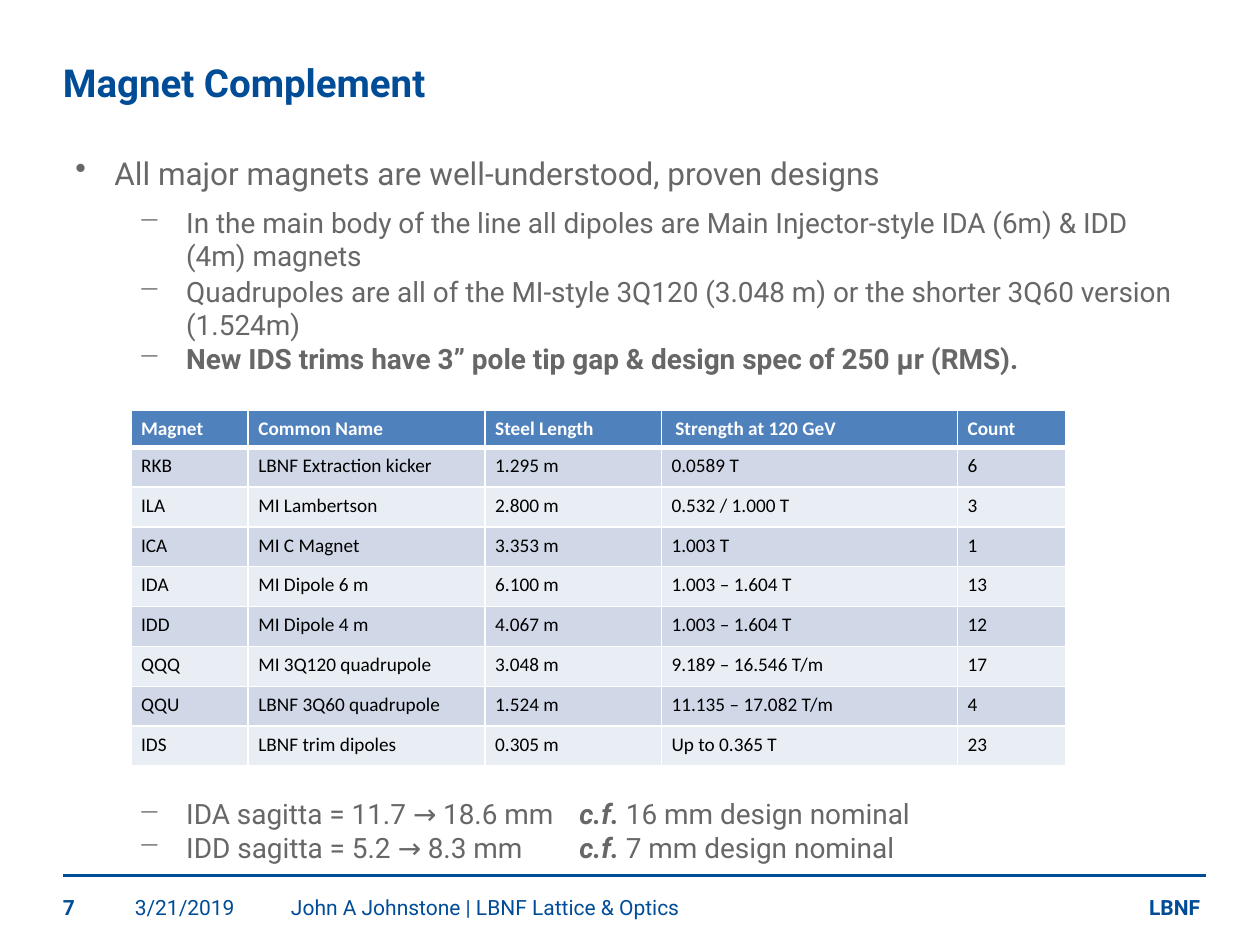
from dataclasses import dataclass

from lxml import etree
from pptx import Presentation
from pptx.dml.color import RGBColor
from pptx.enum.shapes import MSO_CONNECTOR
from pptx.enum.text import MSO_ANCHOR
from pptx.oxml.ns import qn
from pptx.util import Inches, Pt

STRAIGHT = MSO_CONNECTOR.STRAIGHT
TOP, BOTTOM = MSO_ANCHOR.TOP, MSO_ANCHOR.BOTTOM
BLUE, GRAY, WHITE, BLACK = "004C97", "676767", "FFFFFF", "000000"
HEADER_FILL, BAND_FILLS = "4F81BD", ("D0D8E8", "E9EDF4")


@dataclass
class Label:
    text: str
    left: float
    top: float
    width: float
    height: float
    size: int = 12
    bold: bool = False
    anchor: MSO_ANCHOR = BOTTOM


@dataclass
class Bullet:
    """One list item; each run is (text, bold, italic)."""
    runs: list
    before: float = 0
    size: int = 16
    char: str = "−"
    margin: float = 0.88
    hanging: float = 0.38
    level: int = 1


LABELS = [
    Label("Magnet Complement", 0.5, 0.47, 9.07, 0.62, 22, True, TOP),
    Label("7", 0.5, 7.1, 0.57, 0.2, bold=True),
    Label("3/21/2019", 1.07, 7.1, 1.24, 0.2),
    Label("John A Johnstone | LBNF Lattice & Optics", 2.31, 7.1, 6.14, 0.2),
    Label("LBNF", 9.12, 7.09, 0.46, 0.21, bold=True),
]

BULLETS = [
    Bullet([("All major magnets are well-understood, proven designs", False, False)],
           size=18, char="•", margin=0.31, hanging=0.31, level=0),
    Bullet([("In the main body of the line all dipoles are Main Injector-style "
             "IDA (6m) & IDD (4m) magnets", False, False)], before=8),
    Bullet([("Quadrupoles are all of the MI-style 3Q120 (3.048 m) or the shorter "
             "3Q60 version (1.524m)", False, False)], before=1),
    Bullet([("New IDS trims have 3” pole tip gap & design spec of 250 μr (RMS).",
             True, False)]),
    Bullet([("IDA sagitta = 11.7 → 18.6 mm\t", False, False), ("c.f.", True, True),
            (" 16 mm design nominal", False, False)], before=241),
    Bullet([("IDD sagitta = 5.2 → 8.3 mm\t", False, False), ("c.f.", True, True),
            (" 7 mm design nominal", False, False)]),
]

COLUMN_WIDTHS = [0.93, 1.88, 1.4, 2.35, 0.86]
STRENGTH_COLUMN = 3
TABLE_HEIGHT, HEADER_HEIGHT = 2.82, 0.29
ROWS = [
    ("Magnet", "Common Name", "Steel Length", "Strength at 120 GeV", "Count"),
    ("RKB", "LBNF Extraction kicker", "1.295 m", "0.0589 T", "6"),
    ("ILA", "MI Lambertson", "2.800 m", "0.532 / 1.000 T", "3"),
    ("ICA", "MI C Magnet", "3.353 m", "1.003 T", "1"),
    ("IDA", "MI Dipole 6 m", "6.100 m", "1.003 – 1.604 T", "13"),
    ("IDD", "MI Dipole 4 m", "4.067 m", "1.003 – 1.604 T", "12"),
    ("QQQ", "MI 3Q120 quadrupole", "3.048 m", "9.189 – 16.546 T/m", "17"),
    ("QQU", "LBNF 3Q60 quadrupole", "1.524 m", "11.135 – 17.082 T/m", "4"),
    ("IDS", "LBNF trim dipoles", "0.305 m", "Up to 0.365 T", "23"),
]


def rgb(value: str) -> RGBColor:
    return RGBColor.from_string(value)


def add_text(p, text: str, *, size: float, color: str, font: str = "Roboto",
             bold: bool = False, italic: bool = False) -> None:
    r = p.add_run()
    r.text = text
    r.font.name, r.font.size = font, Pt(size)
    r.font.bold, r.font.italic = bold, italic
    r.font.color.rgb = rgb(color)


def add_label(slide, label: Label) -> None:
    sp = slide.shapes.add_textbox(Inches(label.left), Inches(label.top),
                                  Inches(label.width), Inches(label.height))
    tf = sp.text_frame
    tf.word_wrap = True
    tf.vertical_anchor = label.anchor
    tf.margin_left = tf.margin_right = tf.margin_top = tf.margin_bottom = 0
    add_text(tf.paragraphs[0], label.text, size=label.size, color=BLUE, bold=label.bold)


def add_bullets(slide, bullets: list[Bullet]) -> None:
    sp = slide.shapes.add_textbox(Inches(0.5), Inches(1.17), Inches(8.96), Inches(5.77))
    tf = sp.text_frame
    tf.word_wrap = True
    for i, bullet in enumerate(bullets):
        p = tf.add_paragraph() if i else tf.paragraphs[0]
        p.level = bullet.level
        pPr = p._p.get_or_add_pPr()
        pPr.set("marL", str(Inches(bullet.margin)))
        pPr.set("indent", str(-Inches(bullet.hanging)))
        etree.SubElement(pPr, qn("a:buChar"), char=bullet.char)
        if bullet.before:
            p.space_before = Pt(bullet.before)
        for text, bold, italic in bullet.runs:
            add_text(p, text, size=bullet.size, color=GRAY, bold=bold, italic=italic)


def set_borders(cell, widths: dict[str, float]) -> None:
    """Draw white cell borders; widths maps L, R, T, B, in that order, to points."""
    tcPr = cell._tc.get_or_add_tcPr()
    for i, (side, width) in enumerate(widths.items()):
        ln = etree.Element(qn(f"a:ln{side}"), w=str(Pt(width)))
        fill = etree.SubElement(ln, qn("a:solidFill"))
        etree.SubElement(fill, qn("a:srgbClr"), val=WHITE)
        tcPr.insert(i, ln)


def add_magnet_table(slide) -> None:
    table = slide.shapes.add_table(len(ROWS), len(COLUMN_WIDTHS), Inches(1.04), Inches(3.26),
                                   Inches(sum(COLUMN_WIDTHS)), Inches(TABLE_HEIGHT)).table
    for column, width in zip(table.columns, COLUMN_WIDTHS):
        column.width = Inches(width)
    body_height = (TABLE_HEIGHT - HEADER_HEIGHT) / (len(ROWS) - 1)
    for i, values in enumerate(ROWS):
        header = i == 0
        table.rows[i].height = Inches(HEADER_HEIGHT if header else body_height)
        for j, value in enumerate(values):
            cell = table.cell(i, j)
            cell.margin_left = Inches(0.11 if header and j == STRENGTH_COLUMN else 0.08)
            cell.margin_right = Inches(0.08)
            cell.margin_top = cell.margin_bottom = Inches(0.04)
            cell.fill.solid()
            cell.fill.fore_color.rgb = rgb(HEADER_FILL if header else BAND_FILLS[(i - 1) % 2])
            set_borders(cell, {"L": 1, "R": 1, "T": 3 if i == 1 else 1, "B": 3 if header else 1})
            p = cell.text_frame.paragraphs[0]
            p.line_spacing, p.space_after = 1.07, Pt(8)
            add_text(p, value, size=11, font="Calibri", bold=header,
                     color=WHITE if header else BLACK)


def add_footer_rule(slide) -> None:
    line = slide.shapes.add_connector(STRAIGHT, Inches(0.5), Inches(6.95),
                                      Inches(9.57), Inches(6.95))
    line.line.color.rgb = rgb(BLUE)
    line.line.width = Pt(2)
    etree.SubElement(line._element.spPr, qn("a:effectLst"))


def main() -> None:
    prs = Presentation()
    prs.slide_width, prs.slide_height = Inches(10), Inches(7.5)
    slide = prs.slides.add_slide(prs.slide_layouts[6])
    add_footer_rule(slide)
    for label in LABELS:
        add_label(slide, label)
    add_bullets(slide, BULLETS)
    add_magnet_table(slide)
    prs.save("out.pptx")


if __name__ == "__main__":
    main()
